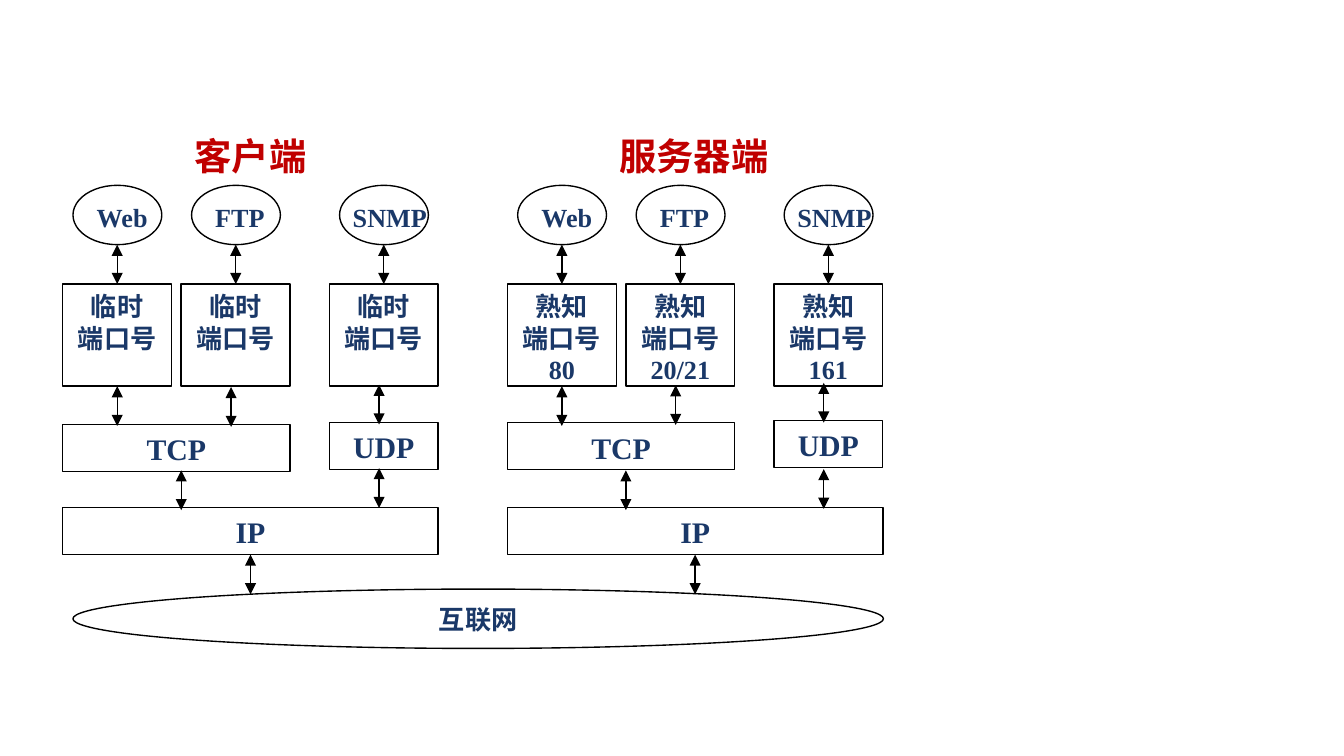
from pptx import Presentation
from pptx.dml.color import RGBColor
from pptx.enum.shapes import MSO_CONNECTOR as LINK, MSO_SHAPE as SHAPE
from pptx.enum.text import MSO_ANCHOR as ANCHOR, PP_ALIGN as ALIGN
from pptx.oxml.ns import qn
from pptx.util import Pt
from lxml.etree import SubElement


def color(value):
    return RGBColor.from_string(value)


class Diagram:
    font = "Times New Roman"
    ink = "1A3868"
    title_ink = "C00000"
    stroke = "000000"
    stroke_width = 0.75

    def __init__(self, slide):
        self.slide = slide

    def set_lines(self, frame, lines, size, ink, align):
        frame.word_wrap = True
        for index, line in enumerate(lines):
            paragraph = frame.paragraphs[0] if index == 0 else frame.add_paragraph()
            paragraph.text = line
            paragraph.alignment = align
            paragraph.font.name = self.font
            paragraph.font.size = Pt(size)
            paragraph.font.bold = True
            paragraph.font.color.rgb = color(ink)

    def outline(self, line):
        line.color.rgb = color(self.stroke)
        line.width = Pt(self.stroke_width)

    def node(self, kind, left, top, width, height, lines=(), size=14, anchor=ANCHOR.TOP):
        node = self.slide.shapes.add_shape(kind, Pt(left), Pt(top), Pt(width), Pt(height))
        node.shadow.inherit = False
        node.fill.background()
        self.outline(node.line)
        node.text_frame.vertical_anchor = anchor
        self.set_lines(node.text_frame, lines, size, self.ink, ALIGN.CENTER)
        return node

    def box(self, *args, **options):
        return self.node(SHAPE.RECTANGLE, *args, **options)

    def oval(self, *args, **options):
        return self.node(SHAPE.OVAL, *args, **options)

    def label(self, left, top, width, height, text, size=14, ink=ink):
        label = self.slide.shapes.add_textbox(Pt(left), Pt(top), Pt(width), Pt(height))
        self.set_lines(label.text_frame, [text], size, ink, ALIGN.LEFT)

    def arrow(self, x, top, length=21.3, above=None, below=None):
        arrow = self.slide.shapes.add_connector(
            LINK.STRAIGHT, Pt(x), Pt(top), Pt(x), Pt(top + length))
        self.outline(arrow.line)
        if above is not None:
            arrow.begin_connect(above, 2)
        if below is not None:
            arrow.end_connect(below, 0)
        properties = arrow._element.spPr
        line = properties.find(qn("a:ln"))
        for end in ("a:headEnd", "a:tailEnd"):
            SubElement(line, qn(end), type="triangle")
        SubElement(properties, qn("a:effectLst"))


APPS = [("Web", 0, 5.6, 47.6), ("FTP", 63.5, 5.6, 47.6), ("SNMP", 142.8, 0, 63.5)]
HOSTS = [
    ("客户端", 33.6, 63.4, 85, 0, [["临时", "端口号"]] * 3),
    ("服务器端", 271.8, 52.8, 106, 1,
     [["熟知", "端口号", number] for number in ("80", "20/21", "161")]),
]


def draw_host(diagram, host):
    title, left, title_shift, title_width, lift, ports = host
    port_boxes = []
    for (app, shift, indent, label_width), lines in zip(APPS, ports):
        column = left + shift
        diagram.oval(column + 5.5, 99.3, 47.6, 31.8)
        diagram.label(column + 5.5 + indent, 104.4, label_width, 23, app)
        port = diagram.box(column, 152.2, 58.4, 54.7, lines)
        diagram.arrow(column + 29.2, 131.1, below=port)
        port_boxes.append(port)

    diagram.box(left, 227.4 - lift, 121.9, 25.2, ["TCP"], size=16)
    diagram.box(left + 142.8, 226.3 - lift, 58.4, 25.2, ["UDP"], size=16)
    ip = diagram.box(left, 271.9, 201.2, 25.2, ["IP"], size=16)

    diagram.arrow(left + 29.2, 206.9, above=port_boxes[0])
    diagram.arrow(left + 90.2, 207.4 - lift)
    diagram.arrow(left + 169.5, 206.1 - lift)
    diagram.arrow(left + 63.5, 252)
    diagram.arrow(left + 169.5, 250.8 + lift / 2)
    diagram.arrow(left + 100.6, 297.1, above=ip)
    diagram.label(left + title_shift, 67.7, title_width, 29.5, title, size=20,
                  ink=diagram.title_ink)


def main():
    deck = Presentation()
    deck.slide_width, deck.slide_height = Pt(720), Pt(405)
    diagram = Diagram(deck.slides.add_slide(deck.slide_layouts[6]))
    for host in HOSTS:
        draw_host(diagram, host)
    diagram.oval(39.1, 315.6, 434.2, 31.8, ["互联网"], anchor=ANCHOR.MIDDLE)
    deck.save("out.pptx")


if __name__ == "__main__":
    main()
